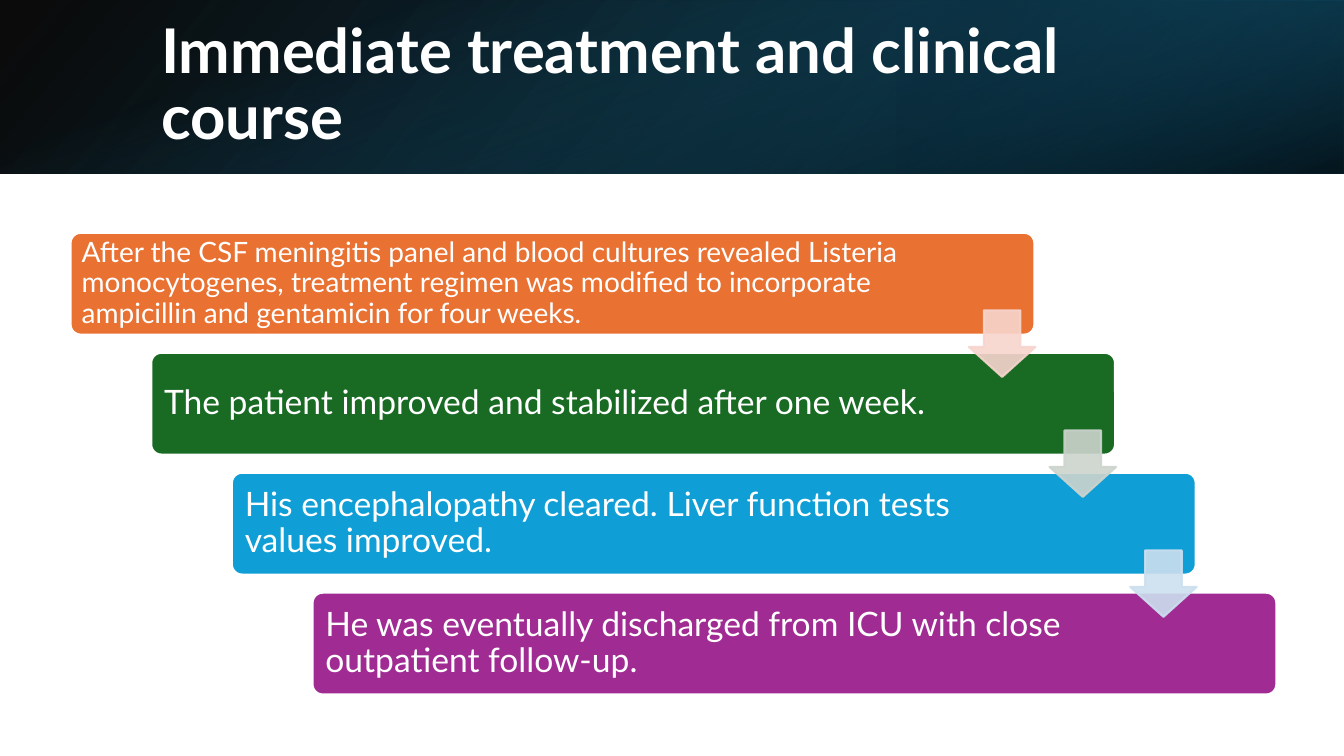
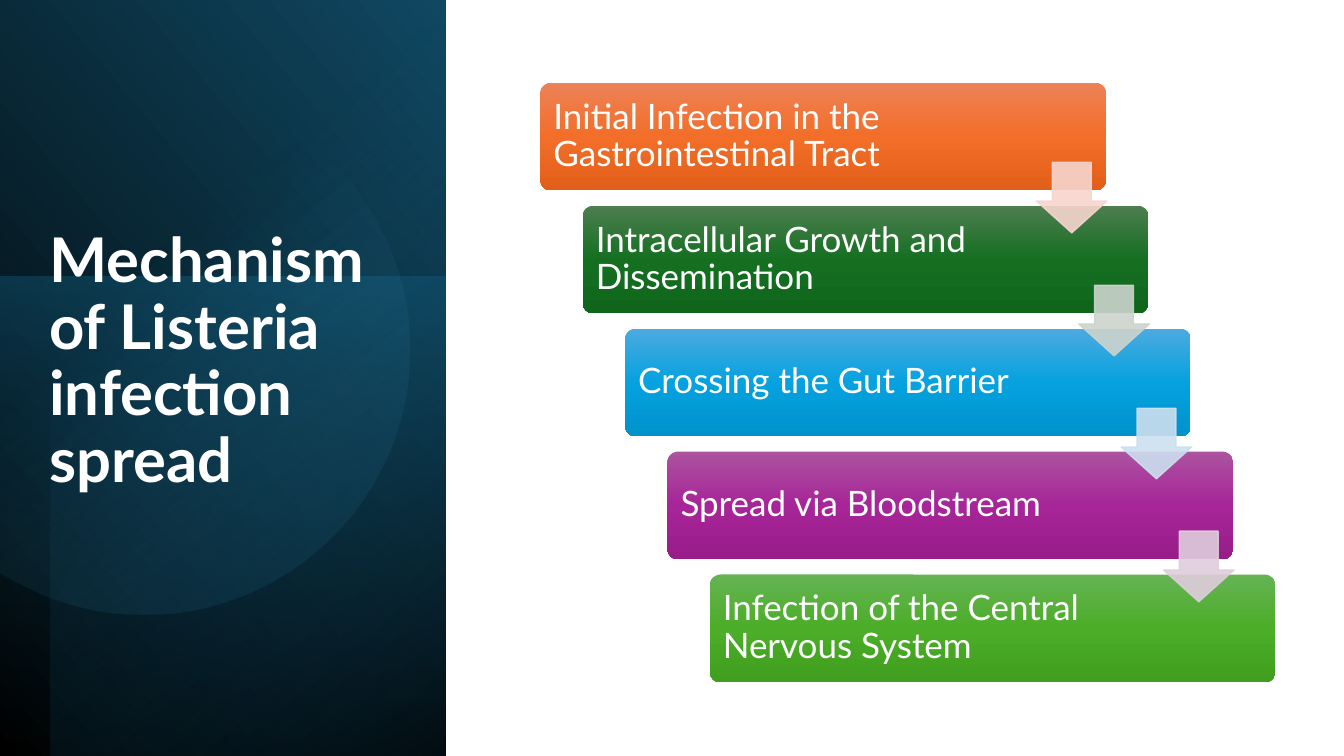
"""Builds two clinical slides with gradient title bands and step-down diagrams."""
from math import asin, cos, pi, sin

from pptx import Presentation
from pptx.dml.color import RGBColor
from pptx.enum.shapes import MSO_SHAPE as Shape
from pptx.enum.text import MSO_ANCHOR as Anchor, PP_ALIGN as Align
from pptx.oxml.ns import qn
from pptx.oxml.xmlchemy import OxmlElement
from pptx.util import Inches, Pt

COLORS = {
    "white": "FFFFFF", "black": "000000", "navy": "104862", "teal": "156082",
    "deep": "0B3041", "sky": "46B1E1",
    "orange": "E97132", "orange_tint": "F7D5CE",
    "orange_top": "ED8257", "orange_middle": "F26E29", "orange_bottom": "E25F1A",
    "green": "196B24", "green_tint": "CCD4CD",
    "green_top": "4D7E50", "green_middle": "156F21", "green_bottom": "0F661B",
    "blue": "0F9ED5", "blue_tint": "CCDFEF",
    "blue_top": "4CAADF", "blue_middle": "05A2DF", "blue_bottom": "0092CB",
    "purple": "A02B93", "purple_tint": "DFCDDC",
    "purple_top": "AC53A0", "purple_middle": "A62598", "purple_bottom": "991C8B",
    "leaf_top": "66B354", "leaf_middle": "4BAD28", "leaf_bottom": "409F1E",
}
TITLE_FONT = {"name": "Lato", "size": Pt(44), "bold": True}
PARAGRAPH = {"alignment": Align.LEFT, "line_spacing": 0.9}
MARGINS = ("margin_left", "margin_top", "margin_right", "margin_bottom")


def set_all(target, values):
    for name, value in values.items():
        setattr(target, name, value)


def set_alpha(color_element, percent):
    alpha = OxmlElement("a:alpha")
    alpha.set("val", str(percent * 1000))
    color_element.append(alpha)


class Deck:
    def __init__(self):
        self.presentation = Presentation()
        set_all(self.presentation, {"slide_width": Inches(13.33), "slide_height": Inches(7.5)})
        self.slide = None

    def new_slide(self):
        self.slide = self.presentation.slides.add_slide(self.presentation.slide_layouts[6])

    def solid(self, fill, color):
        fill.solid()
        fill.fore_color.rgb = RGBColor.from_string(COLORS[color])

    def gradient(self, shape, stops, angle):
        shape.fill.gradient()
        shape.fill.gradient_angle = 360 - angle
        stop_list = shape.element.spPr.find(qn("a:gradFill")).find(qn("a:gsLst"))
        for old_stop in list(stop_list):
            stop_list.remove(old_stop)
        for position, color, alpha in stops:
            stop = OxmlElement("a:gs")
            stop.set("pos", str(position * 1000))
            color_element = OxmlElement("a:srgbClr")
            color_element.set("val", COLORS[color])
            set_alpha(color_element, alpha)
            stop.append(color_element)
            stop_list.append(stop)

    def shape(self, kind, left, top, width, height):
        shape = self.slide.shapes.add_shape(
            kind, Inches(left), Inches(top), Inches(width), Inches(height))
        shape.shadow.inherit = False
        shape.line.fill.background()
        return shape

    def panel(self, box, stops, angle, rotation=0, flip=False):
        panel = self.shape(Shape.RECTANGLE, *box)
        panel.rotation = rotation
        if flip:
            panel.element.spPr.find(qn("a:xfrm")).set("flipH", "1")
        self.gradient(panel, stops, angle)

    def cut_disc(self, center_x, center_y, radius, stops, angle, segments=90):
        start = -pi / 2 - asin(center_x / radius)
        sweep = pi + 2 * asin(center_x / radius)
        turns = [start + sweep * index / segments for index in range(segments + 1)]
        points = [(Inches(center_x + radius * cos(turn)), Inches(center_y + radius * sin(turn)))
                  for turn in turns]
        builder = self.slide.shapes.build_freeform(*points[0])
        builder.add_line_segments(points[1:], close=True)
        disc = builder.convert_to_shape()
        disc.shadow.inherit = False
        disc.line.fill.background()
        self.gradient(disc, stops, angle)

    def fill_text(self, frame, text, font):
        frame.word_wrap = True
        paragraph = frame.paragraphs[0]
        set_all(paragraph, PARAGRAPH)
        run = paragraph.add_run()
        run.text = text
        set_all(run.font, font)
        run.font.color.rgb = RGBColor.from_string(COLORS["white"])

    def title(self, text, left, top, width, height, anchor):
        box = self.slide.shapes.add_textbox(
            Inches(left), Inches(top), Inches(width), Inches(height))
        box.text_frame.vertical_anchor = anchor
        self.fill_text(box.text_frame, text, TITLE_FONT)

    def step(self, box, text, color, size, margin, right_margin, glossy):
        step = self.shape(Shape.ROUNDED_RECTANGLE, *box)
        step.adjustments[0] = 0.1
        if glossy:
            parts = ((0, "top"), (50, "middle"), (100, "bottom"))
            self.gradient(step, [(spot, f"{color}_{part}", 100) for spot, part in parts], 90)
        else:
            self.solid(step.fill, color)
            self.solid(step.line.fill, "white")
            step.line.width = Pt(1.5)
        frame = step.text_frame
        frame.vertical_anchor = Anchor.MIDDLE
        insets = (margin, margin, right_margin, margin)
        set_all(frame, {name: Inches(inset) for name, inset in zip(MARGINS, insets)})
        self.fill_text(frame, text, {"name": "Lato", "size": Pt(size)})

    def arrow(self, left, top, side, color, line_width):
        arrow = self.shape(Shape.DOWN_ARROW, left, top, side, side)
        arrow.adjustments[0] = 0.55
        arrow.adjustments[1] = 0.45
        for fill in (arrow.fill, arrow.line.fill):
            self.solid(fill, f"{color}_tint")
        arrow.line.width = Pt(line_width)
        for color_element in arrow.element.spPr.iter(qn("a:srgbClr")):
            set_alpha(color_element, 90)

    def staircase(self, steps, first_box, first_arrow, shift, side, line_width, glossy=False):
        left, top, width, height = first_box
        shift_x, shift_y = shift
        for index, (color, text, size, margin, right_margin) in enumerate(steps):
            box = (left + index * shift_x, top + index * shift_y, width, height)
            self.step(box, text, color, size, margin, right_margin, glossy)
        for index, (color, *_) in enumerate(steps[:-1]):
            self.arrow(first_arrow[0] + index * shift_x, first_arrow[1] + index * shift_y,
                       side, color, line_width)


def treatment_slide(deck):
    deck.new_slide()
    deck.panel((0, 0, 13.33, 1.72), [(0, "black", 96), (100, "navy", 100)], 140, flip=True)
    deck.panel((8.89, 0, 4.44, 1.72), [(19, "deep", 68), (100, "teal", 79)], 320, 180, True)
    deck.panel((5.8, -5.8, 1.72, 13.33), [(23, "teal", 0), (99, "black", 74)], 340, 90)
    deck.title("Immediate treatment and clinical course", 1.5, 0.38, 10.98, 0.96, Anchor.MIDDLE)
    steps = [
        ("orange", "After the CSF meningitis panel and blood cultures revealed Listeria "
         "monocytogenes, treatment regimen was modified to incorporate ampicillin and "
         "gentamicin for four weeks.", 20, 0.08, 1.19),
        ("green", "The patient improved and stabilized after one week.", 24, 0.1, 1.55),
        ("blue", "His encephalopathy cleared. Liver function tests values improved.",
         24, 0.1, 1.55),
        ("purple", "He was eventually discharged from ICU with close outpatient follow-up.",
         24, 0.1, 1.55),
    ]
    deck.staircase(steps, (0.7, 2.31, 9.56, 1.01), (9.61, 3.08), (0.8, 1.19), 0.66, 1.5)


def mechanism_slide(deck):
    deck.new_slide()
    deck.panel((-1.55, 1.55, 7.52, 4.42), [(0, "black", 100), (100, "navy", 100)], 310, 90, True)
    deck.panel((-0.17, 2.91, 4.76, 4.42), [(0, "teal", 50), (100, "deep", 0)], 190, 270)
    deck.panel((-1.29, 1.79, 7.5, 3.92), [(0, "black", 59), (69, "teal", 0)], 220, 270, True)
    deck.cut_disc(1.43, 3.47, 2.63, [(39, "sky", 0), (100, "navy", 26)], 52)
    deck.title("Mechanism of Listeria infection spread", 0.39, 2.23, 3.44, 3.36, Anchor.TOP)
    stages = [
        ("orange", "Initial Infection in the Gastrointestinal Tract"),
        ("green", "Intracellular Growth and Dissemination"),
        ("blue", "Crossing the Gut Barrier"),
        ("purple", "Spread via Bloodstream"),
        ("leaf", "Infection of the Central Nervous System"),
    ]
    steps = [(color, text, 25, 0.1, 1.22) for color, text in stages]
    deck.staircase(steps, (5.36, 0.82, 5.61, 1.07), (10.28, 1.61), (0.42, 1.22), 0.7, 1, True)


def main():
    deck = Deck()
    treatment_slide(deck)
    mechanism_slide(deck)
    deck.presentation.save("out.pptx")


if __name__ == "__main__":
    main()
